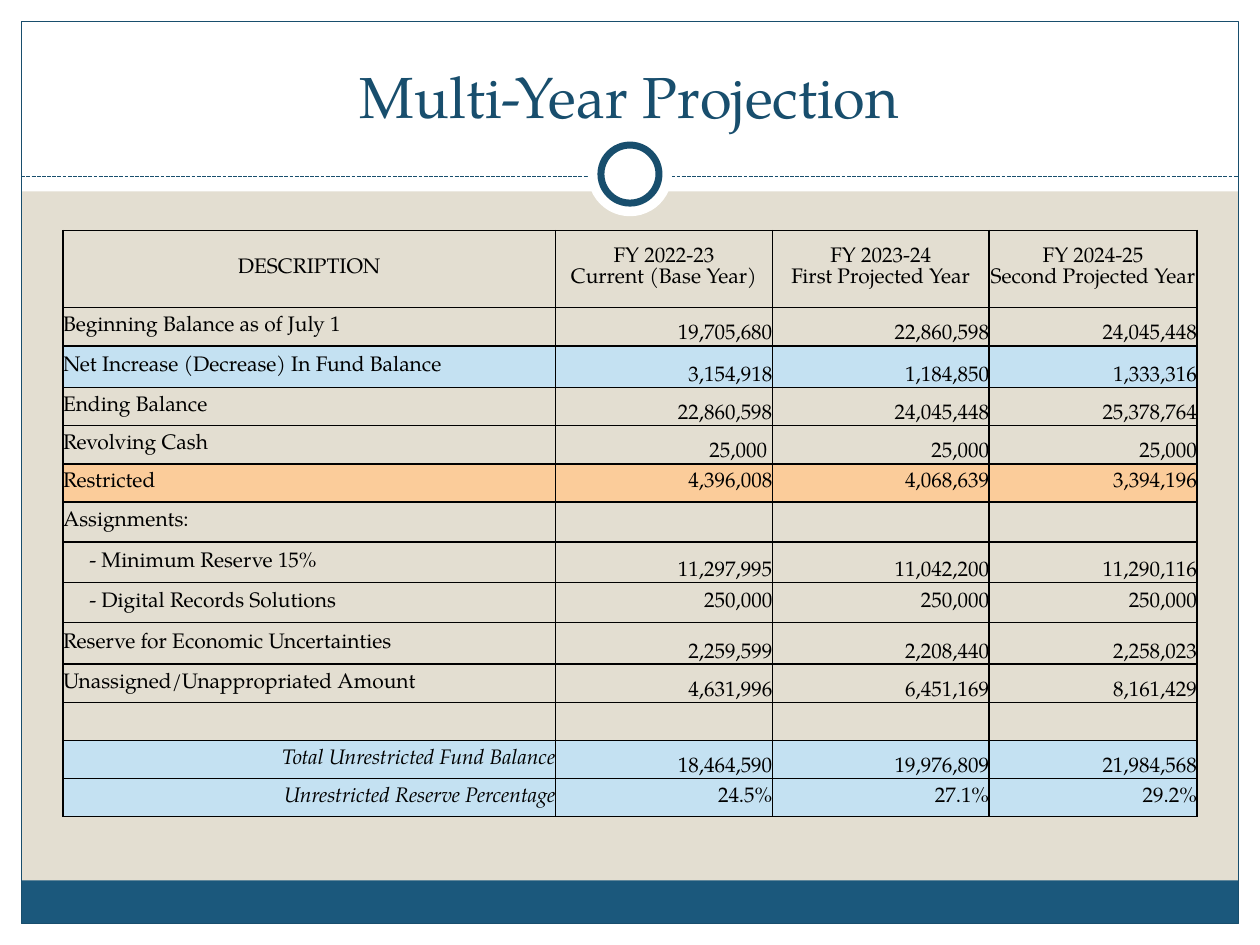
"""Build a slide with a multi-year fund balance projection table."""
import pptx
import pptx.dml.color
import pptx.enum.dml
import pptx.enum.shapes
import pptx.enum.text
import pptx.oxml
import pptx.oxml.ns
import pptx.util

Cm = pptx.util.Cm
Pt = pptx.util.Pt
Shapes = pptx.enum.shapes.MSO_SHAPE
Align = pptx.enum.text.PP_ALIGN
Anchor = pptx.enum.text.MSO_ANCHOR

THEME = {
    "font": "TeX Gyre Pagella", "title_size": 33, "body_size": 12, "spacer_size": 8,
    "paper": "FFFFFF", "sand": "E3DED1", "sky": "C4E1F2", "peach": "FBCC9A",
    "navy": "184E6D", "footer": "1B587C", "ink": "000000",
}

TITLE = "Multi-Year Projection"
HEADER = [
    ("DESCRIPTION", "FY 2022-23", "FY 2023-24", "FY 2024-25"),
    ("", "Current (Base Year)", "First Projected Year", "Second Projected Year"),
]
BLANK = ("", "", "")
ROWS = [
    ("Beginning Balance as of July 1", ("19,705,680", "22,860,598", "24,045,448"), {}),
    ("Net Increase (Decrease) In Fund Balance", ("3,154,918", "1,184,850", "1,333,316"), {"fill": "sky"}),
    ("Ending Balance", ("22,860,598", "24,045,448", "25,378,764"), {}),
    ("Revolving Cash", ("25,000 ", "25,000", "25,000"), {}),
    ("Restricted", ("4,396,008", "4,068,639", "3,394,196"), {"fill": "peach", "middle": True}),
    ("Assignments:", BLANK, {}),
    ("- Minimum Reserve 15%", ("11,297,995", "11,042,200", "11,290,116"), {"indent": 0.53}),
    ("- Digital Records Solutions", ("250,000", "250,000", "250,000"), {"indent": 0.53, "middle": True}),
    ("Reserve for Economic Uncertainties", ("2,259,599", "2,208,440", "2,258,023"), {}),
    ("Unassigned/Unappropriated Amount", ("4,631,996", "6,451,169", "8,161,429"), {}),
    ("", BLANK, {"size": "spacer_size"}),
    ("Total Unrestricted Fund Balance", ("18,464,590", "19,976,809", "21,984,568"),
     {"fill": "sky", "total": True}),
    ("Unrestricted Reserve Percentage", ("24.5%", "27.1%", "29.2%"),
     {"fill": "sky", "total": True, "middle": True}),
]
COLUMN_WIDTHS = [9.93, 4.37, 4.37, 4.19]
ROW_HEIGHTS = [0.76, 0.79, 0.77, 0.84, 0.77, 0.77, 0.77, 0.81, 0.81, 0.81, 0.84, 0.77, 0.43, 0.77, 0.77]

SLIDE_WIDTH, SLIDE_HEIGHT, MARGIN = 25.4, 19.05, 0.43
INNER_WIDTH = SLIDE_WIDTH - 2 * MARGIN
RULE_Y, RING_Y = 3.56, 3.51
TABLE_LEFT, TABLE_TOP = 1.27, 4.65


def color(name):
    """Return the theme colour with this name."""
    return pptx.dml.color.RGBColor.from_string(THEME[name])


def write_text(frame, text, *, size="body_size", ink="ink", align=Align.LEFT, italic=False, space_after=0):
    """Write one formatted paragraph into a text frame."""
    frame.word_wrap = True
    paragraph = frame.paragraphs[0]
    paragraph.alignment = align
    paragraph.space_after = Pt(space_after)
    run = paragraph.add_run()
    run.text = text
    run.font.name = THEME["font"]
    run.font.size = Pt(THEME[size])
    run.font.italic = italic
    run.font.color.rgb = color(ink)


def add_block(slide, kind, left, top, width, height, fill=None, line=None, line_width=0.75):
    """Add a preset shape without shadow."""
    shape = slide.shapes.add_shape(kind, Cm(left), Cm(top), Cm(width), Cm(height))
    shape.shadow.inherit = False
    if fill:
        shape.fill.solid()
        shape.fill.fore_color.rgb = color(fill)
    else:
        shape.fill.background()
    if line:
        shape.line.color.rgb = color(line)
        shape.line.width = Pt(line_width)
    else:
        shape.line.fill.background()


def add_circle(slide, diameter, **style):
    """Add a circle centred on the ornament of the title rule."""
    add_block(slide, Shapes.OVAL, (SLIDE_WIDTH - diameter) / 2, RING_Y - diameter / 2,
              diameter, diameter, **style)


def add_rule(slide):
    """Add the dashed rule below the title."""
    rule = slide.shapes.add_connector(pptx.enum.shapes.MSO_CONNECTOR.STRAIGHT, Cm(MARGIN), Cm(RULE_Y),
                                      Cm(SLIDE_WIDTH - MARGIN), Cm(RULE_Y))
    rule.line.color.rgb = color("navy")
    rule.line.width = Pt(0.75)
    rule.line.dash_style = pptx.enum.dml.MSO_LINE.SQUARE_DOT
    properties = rule._element.spPr
    properties.append(properties.makeelement(pptx.oxml.ns.qn("a:effectLst"), {}))


def set_borders(cell, open_sides=""):
    """Draw the cell borders, leaving out the open sides."""
    properties = cell._tc.get_or_add_tcPr()
    for side in "LRTB":
        paint = "<a:noFill/>"
        if side not in open_sides:
            paint = f'<a:solidFill><a:srgbClr val="{THEME["ink"]}"/></a:solidFill>'
        properties.append(pptx.oxml.parse_xml(
            f'<a:ln{side} {pptx.oxml.ns.nsdecls("a")} w="{Pt(1)}">{paint}</a:ln{side}>'))


def fill_cell(cell, text, *, anchor, fill="sand", indent=0, open_sides="", **text_format):
    """Format one table cell and write its text."""
    set_borders(cell, open_sides)
    cell.fill.solid()
    cell.fill.fore_color.rgb = color(fill)
    cell.margin_left = Cm(indent)
    cell.margin_right = cell.margin_top = cell.margin_bottom = 0
    cell.vertical_anchor = anchor
    write_text(cell.text_frame, text, **text_format)


def add_projection_table(slide):
    """Add the projection table with its two-line header."""
    table = slide.shapes.add_table(
        len(ROW_HEIGHTS), len(COLUMN_WIDTHS), Cm(TABLE_LEFT), Cm(TABLE_TOP),
        Cm(sum(COLUMN_WIDTHS)), Cm(sum(ROW_HEIGHTS))).table
    table.first_row = table.horz_banding = False
    for column, width in zip(table.columns, COLUMN_WIDTHS):
        column.width = Cm(width)
    for row, height in zip(table.rows, ROW_HEIGHTS):
        row.height = Cm(height)

    header_styles = [(Anchor.BOTTOM, "B"), (Anchor.TOP, "T")]
    for row_index, (labels, (anchor, open_side)) in enumerate(zip(HEADER, header_styles)):
        for column_index, label in enumerate(labels):
            is_description = column_index == 0
            fill_cell(table.cell(row_index, column_index), label, align=Align.CENTER,
                      anchor=Anchor.MIDDLE if is_description else anchor,
                      open_sides="" if is_description else open_side)
    table.cell(0, 0).merge(table.cell(1, 0))

    for row_index, (label, values, style) in enumerate(ROWS, len(HEADER)):
        total = style.get("total", False)
        shared = {"fill": style.get("fill", "sand"), "size": style.get("size", "body_size")}
        fill_cell(table.cell(row_index, 0), label, anchor=Anchor.MIDDLE, indent=style.get("indent", 0),
                  italic=total, align=Align.RIGHT if total else Align.LEFT, **shared)
        anchor = Anchor.MIDDLE if style.get("middle") else Anchor.BOTTOM
        for column_index, value in enumerate(values, 1):
            fill_cell(table.cell(row_index, column_index), value, anchor=anchor, align=Align.RIGHT, **shared)


def main():
    """Build and save the presentation."""
    presentation = pptx.Presentation()
    presentation.slide_width, presentation.slide_height = Cm(SLIDE_WIDTH), Cm(SLIDE_HEIGHT)
    slide = presentation.slides.add_slide(presentation.slide_layouts[6])
    slide.background.fill.solid()
    slide.background.fill.fore_color.rgb = color("sand")

    for left, top, width, height in [
        (0, SLIDE_HEIGHT - MARGIN, SLIDE_WIDTH, MARGIN),
        (0, 0, SLIDE_WIDTH, 3.86),
        (0, 0, MARGIN, SLIDE_HEIGHT),
        (SLIDE_WIDTH - MARGIN, 0, MARGIN, SLIDE_HEIGHT),
    ]:
        add_block(slide, Shapes.RECTANGLE, left, top, width, height, fill="paper")
    add_block(slide, Shapes.RECTANGLE, MARGIN, 17.75, INNER_WIDTH, 0.87, fill="footer")
    add_block(slide, Shapes.RECTANGLE, MARGIN, MARGIN, INNER_WIDTH, SLIDE_HEIGHT - 2 * MARGIN, line="navy")
    add_rule(slide)
    add_circle(slide, 1.7, fill="paper")
    add_circle(slide, 1.17, fill="paper", line="navy", line_width=4)

    title = slide.shapes.add_textbox(Cm(0.84), Cm(0.64), Cm(23.7), Cm(2.11)).text_frame
    title.vertical_anchor = Anchor.BOTTOM
    write_text(title, TITLE, size="title_size", ink="navy", align=Align.CENTER, space_after=6)
    add_projection_table(slide)
    presentation.save("out.pptx")


if __name__ == "__main__":
    main()
